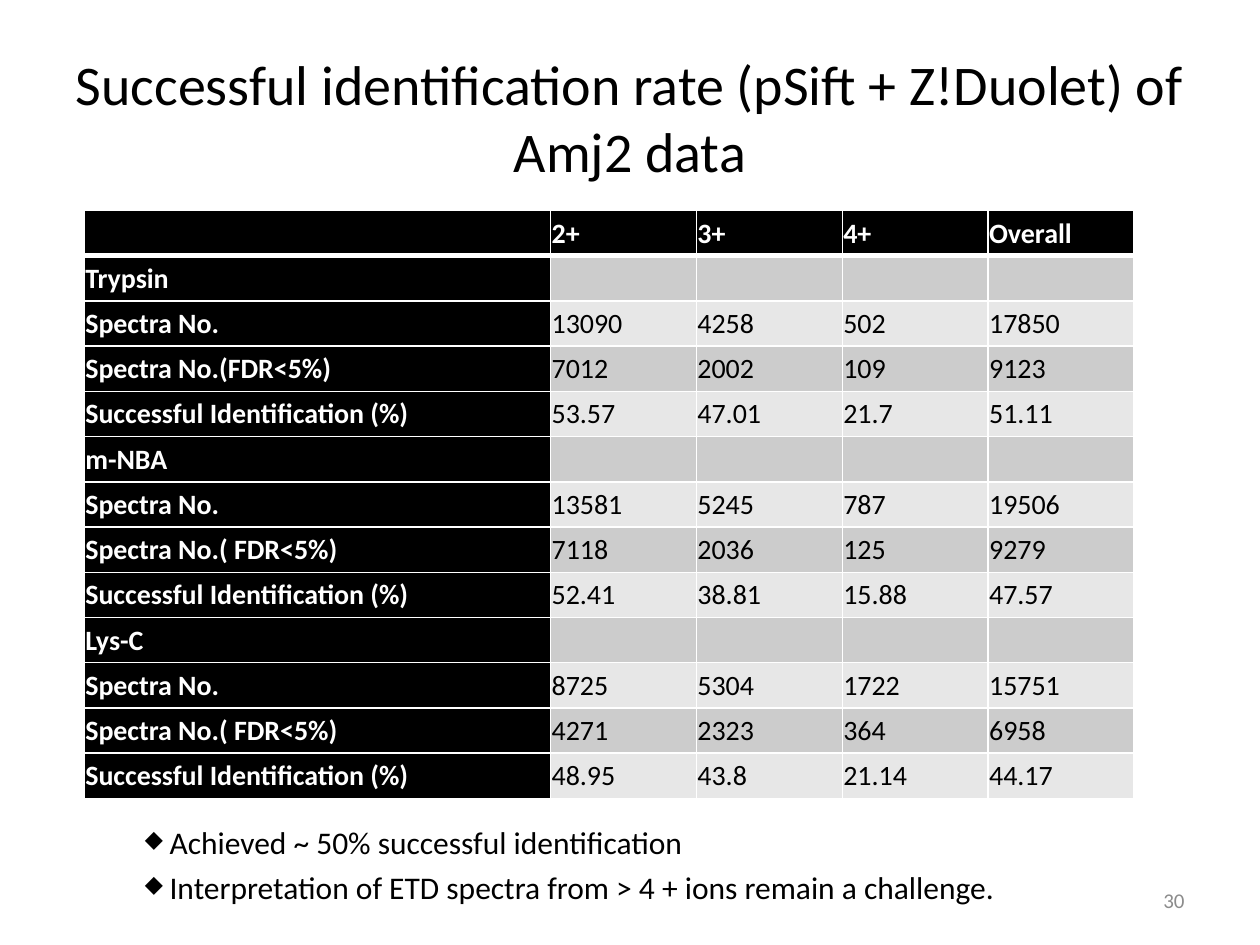
from lxml import etree
from pptx import Presentation
from pptx.dml.color import RGBColor
from pptx.enum import text
from pptx.oxml import ns
from pptx.util import Cm, Pt

BLACK = RGBColor(0x00, 0x00, 0x00)
WHITE = RGBColor(0xFF, 0xFF, 0xFF)
GRAY = RGBColor(0x8C, 0x8C, 0x8C)
BANDS = [RGBColor(0xE7, 0xE7, 0xE7), RGBColor(0xCC, 0xCC, 0xCC)]
ALIGN = text.PP_ALIGN
MIDDLE = text.MSO_ANCHOR.MIDDLE


def write(paragraph, words, size, color, align=ALIGN.LEFT, bold=False):
    paragraph.alignment = align
    run = paragraph.add_run()
    run.text = words
    formats = {"name": "Calibri", "size": Pt(size), "bold": bold}
    for attribute, value in formats.items():
        setattr(run.font, attribute, value)
    run.font.color.rgb = color


def add_border(cell, side, points):
    line = etree.SubElement(cell._tc.get_or_add_tcPr(), ns.qn(f"a:ln{side}"), w=str(Pt(points)))
    fill = etree.SubElement(line, ns.qn("a:solidFill"))
    etree.SubElement(fill, ns.qn("a:srgbClr"), val=str(WHITE))


prs = Presentation()
prs.slide_width, prs.slide_height = Cm(25.4), Cm(19.05)
slide = prs.slides.add_slide(prs.slide_layouts[5])

# Title
title = slide.shapes.title
title.left, title.top, title.width, title.height = Cm(1.27), Cm(0.76), Cm(22.86), Cm(3.18)
title.text_frame.vertical_anchor = MIDDLE
write(title.text_frame.paragraphs[0],
      "Successful identification rate (pSift + Z!Duolet) of Amj2 data", 32, BLACK, ALIGN.CENTER)

# Slide number
number = slide.shapes.add_textbox(Cm(18.2), Cm(17.65), Cm(5.93), Cm(1.01)).text_frame
number.word_wrap = True
number.vertical_anchor = MIDDLE
write(number.paragraphs[0], "30", 12, GRAY, ALIGN.RIGHT)

# Identification table: a header, then a heading and three rows per digest
rows = [
    ["", "2+", "3+", "4+", "Overall"],
    ["Trypsin", "", "", "", ""],
    ["Spectra No.", "13090", "4258", "502", "17850"],
    ["Spectra No.(FDR<5%)", "7012", "2002", "109", "9123"],
    ["Successful Identification (%)", "53.57", "47.01", "21.7", "51.11"],
    ["m-NBA", "", "", "", ""],
    ["Spectra No.", "13581", "5245", "787", "19506"],
    ["Spectra No.( FDR<5%)", "7118", "2036", "125", "9279"],
    ["Successful Identification (%)", "52.41", "38.81", "15.88", "47.57"],
    ["Lys-C", "", "", "", ""],
    ["Spectra No.", "8725", "5304", "1722", "15751"],
    ["Spectra No.( FDR<5%)", "4271", "2323", "364", "6958"],
    ["Successful Identification (%)", "48.95", "43.8", "21.14", "44.17"],
]
rates = slide.shapes.add_table(len(rows), 5, Cm(1.7), Cm(4.24), Cm(21.16), Cm(11.86)).table
rates.first_col = True
for column, width in zip(rates.columns, [9.4] + [2.94] * 4):
    column.width = Cm(width)

cell_format = {"margin_left": Cm(0.02), "margin_right": Cm(0.02), "margin_top": Cm(0.02),
               "margin_bottom": 0, "vertical_anchor": MIDDLE}
for r, row in enumerate(rows):
    for c, words in enumerate(row):
        cell = rates.cell(r, c)
        heading = r == 0 or c == 0
        for attribute, value in cell_format.items():
            setattr(cell, attribute, value)
        borders = {"L": 1, "R": 1, "T": 3 if r == 1 else 1, "B": 3 if r == 0 else 1}
        for side, points in borders.items():
            add_border(cell, side, points)
        cell.fill.solid()
        cell.fill.fore_color.rgb = BLACK if heading else BANDS[r % 2]
        if words:
            align = ALIGN.LEFT if c == 3 and not heading else ALIGN.JUSTIFY
            write(cell.text_frame.paragraphs[0], words, 16,
                  WHITE if heading else BLACK, align, heading)

# Conclusions
conclusions = slide.shapes.add_textbox(Cm(2.54), Cm(16.31), Cm(20.32), Cm(2.03)).text_frame
conclusions.word_wrap = True
findings = ["Achieved ~ 50% successful identification",
            "Interpretation of ETD spectra from > 4 + ions remain a challenge."]
for i, finding in enumerate(findings):
    paragraph = conclusions.add_paragraph() if i else conclusions.paragraphs[0]
    write(paragraph, finding, 18, BLACK)
    paragraph.line_spacing = 1.2
    properties = paragraph._p.get_or_add_pPr()
    properties.set("marL", str(Cm(0.63)))
    properties.set("indent", str(-Cm(0.5)))
    etree.SubElement(properties, ns.qn("a:buSzPct"), val="75000")
    etree.SubElement(properties, ns.qn("a:buChar"), char="◆")

prs.save("out.pptx")
